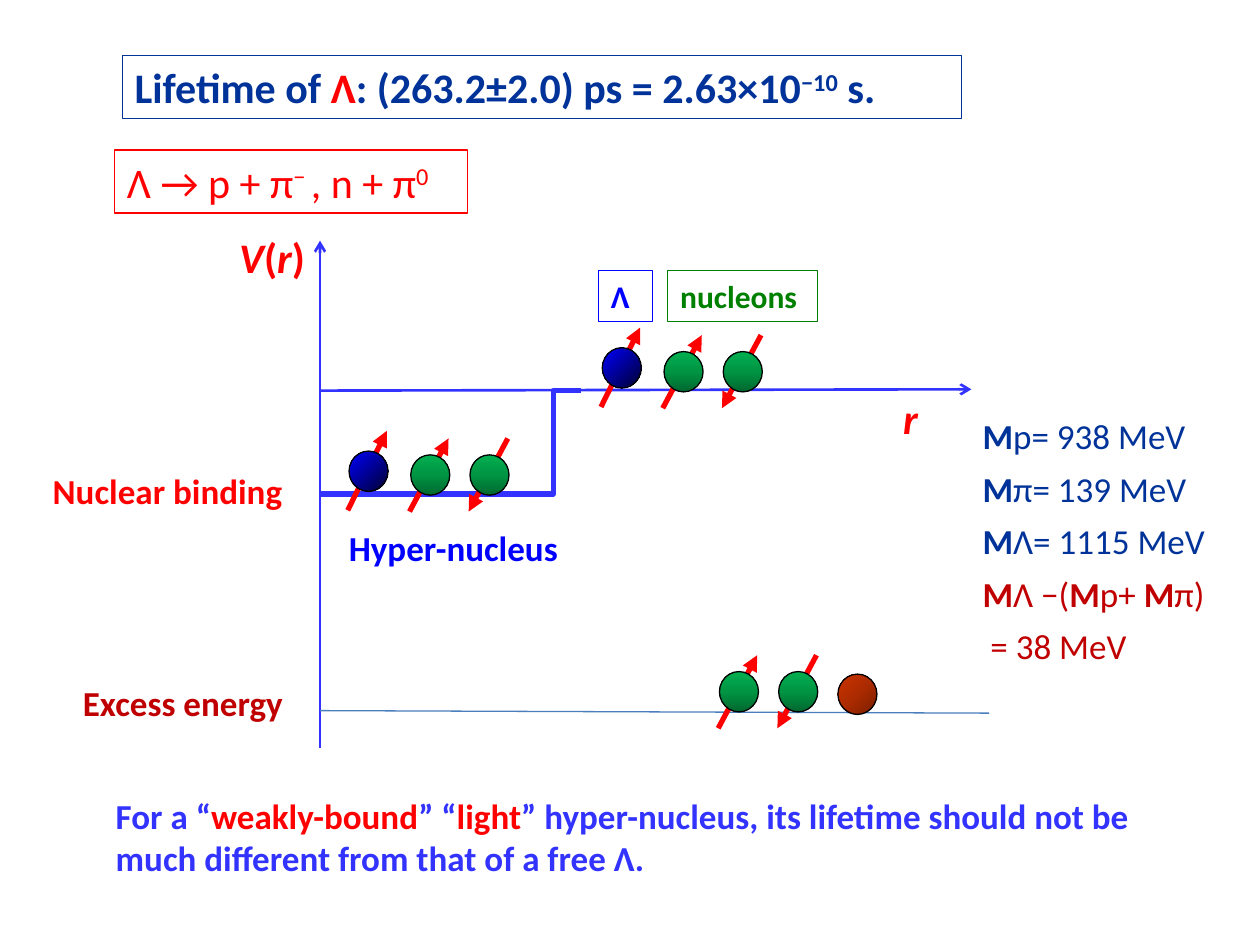
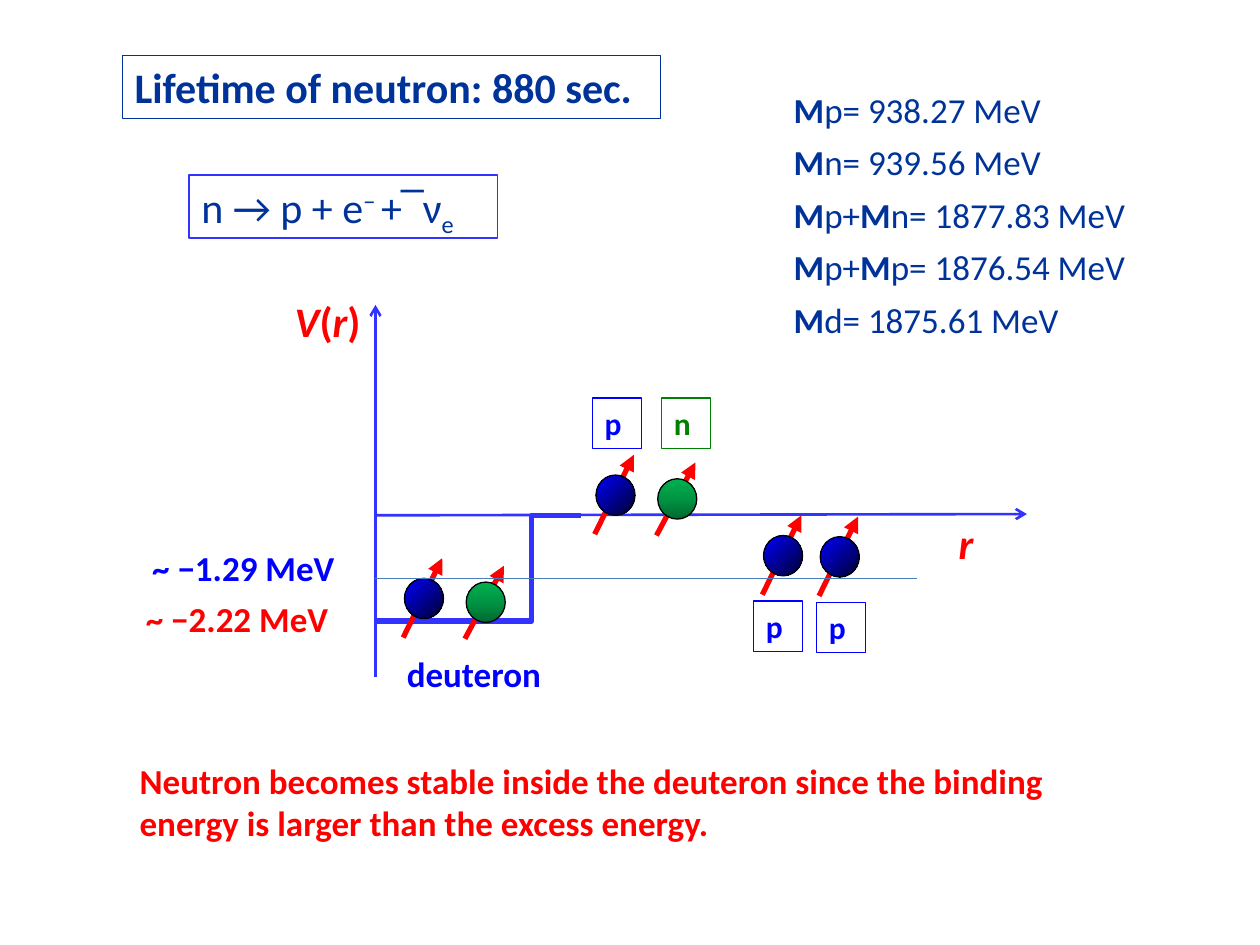
from copy import deepcopy
from dataclasses import dataclass

from lxml.etree import SubElement
from pptx import Presentation
from pptx.dml.color import RGBColor
from pptx.enum.shapes import MSO_CONNECTOR, MSO_SHAPE
from pptx.enum.text import MSO_AUTO_SIZE
from pptx.oxml.ns import qn
from pptx.util import Pt

EMU_PER_PX = 9144  # 100 px to the inch
FONT = "Calibri"
NAVY, RED, DARK_RED = "003399", "FF0000", "C00000"
BLUE, AXIS_BLUE, LEVEL_BLUE, GREEN = "0000FF", "3333FF", "4B7EBC", "008000"
SUPERSCRIPT, SUBSCRIPT = {"baseline": 30}, {"baseline": -25}


@dataclass
class Particle:
    colours: tuple
    angle: int  # counter-clockwise
    arrow_rise: int = 0
    arrow_drop: int = 0


NUCLEON = Particle(("00682F", "009443", "00B050"), 90, 13, 45)
BLUE_PARTICLE = Particle((BLUE, "000031"), 315, 16, 47)
PION = Particle(("791E00", "AC2B00", "CC3300"), 135)


def px(length):
    return length * EMU_PER_PX


def rgb(colour):
    return RGBColor.from_string(colour)


class Deck:
    def __init__(self):
        self.presentation = Presentation()
        self.presentation.slide_width = px(1000)
        self.presentation.slide_height = px(750)
        self.slide = None

    def new_slide(self):
        layout = self.presentation.slide_layouts[6]
        self.slide = self.presentation.slides.add_slide(layout)

    def connector(self, start, end, colour, width, head=None, kind=MSO_CONNECTOR.STRAIGHT):
        line = self.slide.shapes.add_connector(kind, *map(px, start + end))
        line.line.color.rgb = rgb(colour)
        line.line.width = Pt(width)
        properties = line._element.spPr
        if head:
            SubElement(properties.find(qn("a:ln")), qn("a:tailEnd"), type=head)
        SubElement(properties, qn("a:effectLst"))
        return line

    def add_runs(self, paragraph, text, size, colour, bold, italic, accents):
        """Add runs split by "|"; every second run takes the next accent in turn."""
        for index, part in enumerate(text.split("|")):
            if not part:
                continue
            style = {"colour": colour, "bold": bold, "italic": italic, "baseline": 0}
            if index % 2:
                style.update(accents[index // 2 % len(accents)])
            run = paragraph.add_run()
            run.text = part
            run.font.name = FONT
            run.font.size = Pt(size)
            run.font.bold = style["bold"]
            run.font.italic = style["italic"]
            run.font.color.rgb = rgb(style["colour"])
            if style["baseline"]:
                run.font._element.set("baseline", str(style["baseline"] * 1000))

    def text_box(self, left, top, width, height, wrap=False, border=None):
        box = self.slide.shapes.add_textbox(px(left), px(top), px(width), px(height))
        box.text_frame.word_wrap = wrap
        box.text_frame.auto_size = MSO_AUTO_SIZE.SHAPE_TO_FIT_TEXT
        if border:
            box.line.color.rgb = rgb(border)
            box.line.width = Pt(0.75)
        return box.text_frame

    def text(self, left, top, width, text, colour, size=20, height=44, bold=True,
             italic=False, accents=(), wrap=False, border=None):
        frame = self.text_box(left, top, width, height, wrap, border)
        self.add_runs(frame.paragraphs[0], text, size, colour, bold, italic, accents)

    def title(self, width, text, accents=()):
        self.text(97, 44, width, text, NAVY, 24, 50, accents=accents, border=NAVY)

    def decay(self, left, top, width, text, colour, border, accents):
        self.text(left, top, width, text, colour, 24, 50, bold=False,
                  accents=accents, border=border)

    def tag(self, left, top, width, text, colour):
        self.text(left, top, width, text, colour, 18, 40, border=colour)

    def conclusion(self, left, top, width, text, colour, accents=()):
        self.text(left, top, width, text, colour, height=77, accents=accents, wrap=True)

    def masses(self, left, top, width, lines, excess_lines=()):
        """List masses with a bold M, the excess lines in dark red."""
        frame = self.text_box(left, top, width, 212)
        coloured = [(line, NAVY) for line in lines]
        coloured += [(line, DARK_RED) for line in excess_lines]
        for index, (line, colour) in enumerate(coloured):
            paragraph = frame.add_paragraph() if index else frame.paragraphs[0]
            if index:
                paragraph.space_before = Pt(6)
            self.add_runs(paragraph, line, 20, colour, True, False, [{"bold": False}])

    def potential(self, left, top, bottom, zero, well_edge, well_depth):
        """Draw the V(r) and r axes with their labels and the potential well."""
        self.connector((left, bottom), (left, top), AXIS_BLUE, 1.5, "arrow")
        self.connector((left, zero), (left + 517, zero - 1), AXIS_BLUE, 1.5, "arrow")
        well_end = 461
        well = self.connector((left, zero + well_depth), (well_end, zero), AXIS_BLUE, 3,
                              kind=MSO_CONNECTOR.ELBOW)
        edge_share = round((well_edge - left) / (well_end - left) * 100000)
        adjustments = well._element.spPr.find(qn("a:prstGeom")).find(qn("a:avLst"))
        SubElement(adjustments, qn("a:gd"), name="adj1", fmla=f"val {edge_share}")
        self.text(left - 74, top - 12, 88, "V|(|r|)", RED, 24, 50, italic=True,
                  accents=[{"italic": False}])
        self.text(left + 453, zero - 3, 55, "r", RED, 24, 50, italic=True)

    def level(self, start, end):
        self.connector(start, end, LEVEL_BLUE, 0.75)

    def ball(self, particle, left, top):
        shape = self.slide.shapes.add_shape(
            MSO_SHAPE.OVAL, px(left), px(top), px(31), px(32))
        shape.shadow.inherit = False
        shape.line.color.rgb = rgb("000000")
        shape.line.width = Pt(0.75)
        shape.fill.gradient()
        shape.fill.gradient_angle = particle.angle
        stops = shape._element.spPr.find(qn("a:gradFill")).find(qn("a:gsLst"))
        while len(stops) < len(particle.colours):
            stops.append(deepcopy(stops[0]))
        for index, stop in enumerate(shape.fill.gradient_stops):
            stop.position = index / (len(particle.colours) - 1)
            stop.color.rgb = rgb(particle.colours[index])

    def spinning(self, particle, left, top, up=True):
        """Draw a ball with its spin arrow behind it."""
        low = (left - 1, top + particle.arrow_drop)
        high = (left + 30, top - particle.arrow_rise)
        start, end = (low, high) if up else (high, low)
        self.connector(start, end, RED, 3, "triangle")
        self.ball(particle, left, top)


def lambda_slide(deck):
    deck.new_slide()
    deck.potential(254, 191, 594, 310, well_edge=439, well_depth=82)
    deck.level((254, 564), (785, 566))
    for left, top in ((277, 358), (478, 276)):
        deck.spinning(BLUE_PARTICLE, left, top)
        deck.spinning(NUCLEON, left + 49, top + 3)
        deck.spinning(NUCLEON, left + 96, top + 3, up=False)
    deck.spinning(NUCLEON, 571, 533)
    deck.spinning(NUCLEON, 618, 533, up=False)
    deck.ball(PION, 665, 535)
    deck.text(56, 536, 187, "Excess energy", DARK_RED)
    deck.text(32, 368, 210, "Nuclear binding", RED)
    deck.text(267, 413, 188, "Hyper-nucleus", BLUE)
    deck.tag(475, 215, 43, "Λ", BLUE)
    deck.tag(530, 215, 119, "nucleons", GREEN)
    deck.decay(91, 119, 280, "Λ → p + π|− |, n + π|0", RED, RED, [SUPERSCRIPT])
    deck.masses(770, 324, 210,
                ["M|p= 938 MeV", "M|π= 139 MeV", "M|Λ= 1115 MeV"],
                ["M|Λ −(|M|p+| M|π)", "| = 38 MeV"])
    deck.conclusion(
        82, 626, 842,
        "For a “|weakly-bound|” “|light|” hyper-nucleus, its lifetime should not be "
        "much different from that of a free Λ.", AXIS_BLUE, [{"colour": RED}])
    deck.title(666, "Lifetime of |Λ|: (263.2±2.0) ps = 2.63×10|−10| s.",
               [{"colour": RED}, SUPERSCRIPT])


def neutron_slide(deck):
    deck.new_slide()
    deck.title(427, "Lifetime of neutron: 880 sec.")
    deck.potential(298, 242, 537, 409, well_edge=422, well_depth=84)
    for left, top in ((321, 459), (473, 377)):
        deck.spinning(BLUE_PARTICLE, left, top)
        deck.spinning(NUCLEON, left + 49, top + 3)
    deck.spinning(BLUE_PARTICLE, 606, 425)
    deck.spinning(BLUE_PARTICLE, 651, 426)
    deck.level((298, 459), (728, 459))
    deck.text(106, 469, 174, "~ −2.22 MeV", RED)
    deck.text(111, 429, 174, "~ −1.29 MeV", BLUE)
    deck.text(313, 513, 128, "deuteron", BLUE)
    deck.decay(150, 139, 245, "n → p + e|− |+‾ν|e", NAVY, AXIS_BLUE,
               [SUPERSCRIPT, SUBSCRIPT])
    deck.masses(620, 65, 298,
                ["M|p= 938.27 MeV", "M|n= 939.56 MeV", "M|p+|M|n= 1877.83 MeV",
                 "M|p+|M|p= 1876.54 MeV", "M|d= 1875.61 MeV"])
    for left, top, name, colour in ((470, 316, "p", BLUE), (525, 316, "n", GREEN),
                                    (598, 477, "p", BLUE), (648, 478, "p", BLUE)):
        deck.tag(left, top, 39, name, colour)
    deck.conclusion(
        101, 598, 783,
        "Neutron becomes stable inside the deuteron since the binding energy is "
        "larger than the excess energy.", RED)


def main():
    deck = Deck()
    lambda_slide(deck)
    neutron_slide(deck)
    deck.presentation.save("out.pptx")


if __name__ == "__main__":
    main()
